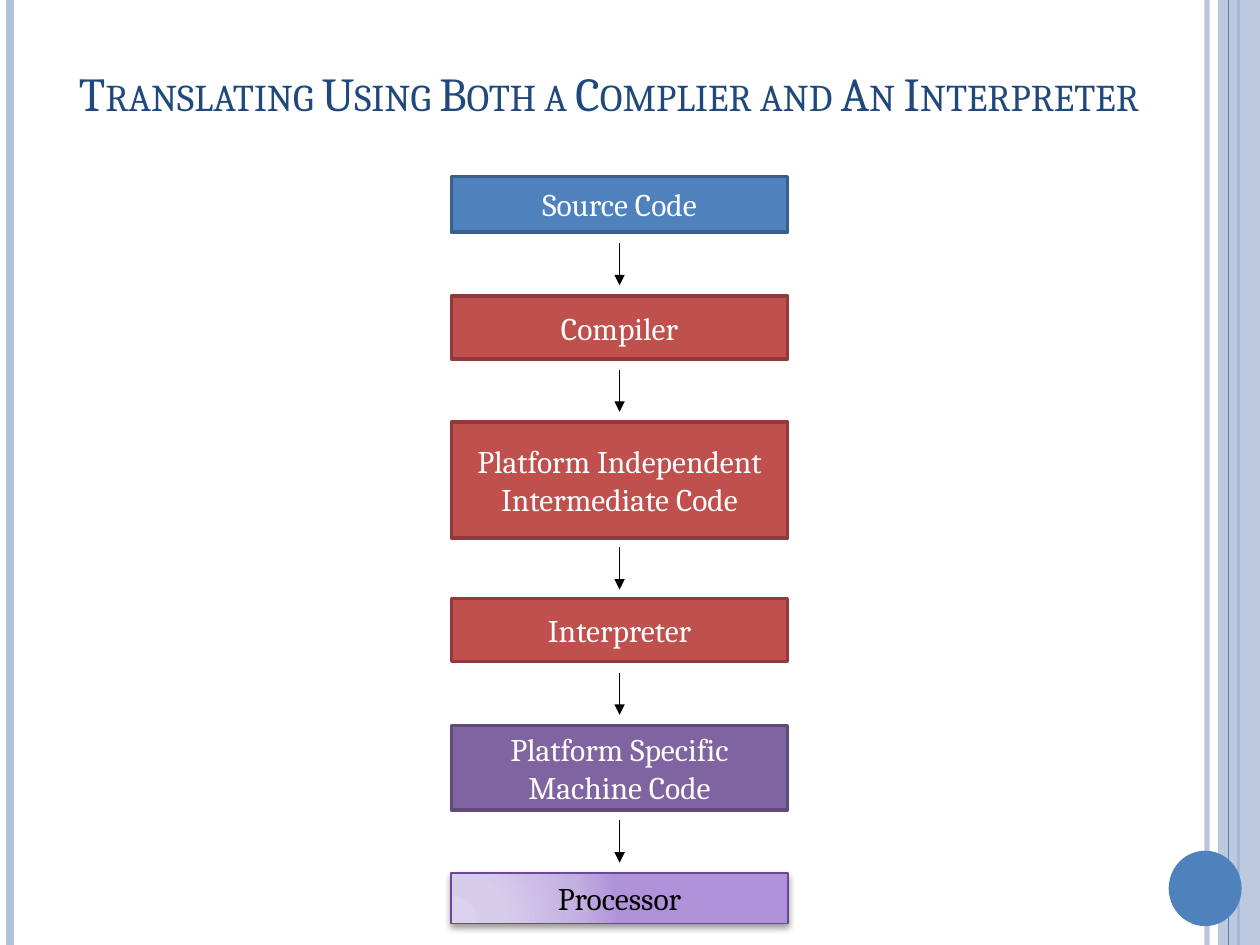
from lxml import etree
from pptx import Presentation
from pptx.dml.color import RGBColor
from pptx.enum.shapes import MSO_CONNECTOR, MSO_SHAPE
from pptx.enum.text import MSO_ANCHOR, MSO_AUTO_SIZE, PP_ALIGN
from pptx.oxml import parse_xml
from pptx.oxml.ns import nsdecls, qn
from pptx.util import Cm, Pt

RECT, OVAL = MSO_SHAPE.RECTANGLE, MSO_SHAPE.OVAL
STRAIGHT = MSO_CONNECTOR.STRAIGHT
MIDDLE, TOP = MSO_ANCHOR.MIDDLE, MSO_ANCHOR.TOP
CENTER = PP_ALIGN.CENTER
GROW = MSO_AUTO_SIZE.SHAPE_TO_FIT_TEXT

FONT = "Cambria"
WHITE = RGBColor(0xFF, 0xFF, 0xFF)
BLACK = RGBColor(0x00, 0x00, 0x00)
NAVY = RGBColor(0x1F, 0x49, 0x7D)
BLUE = RGBColor(0x4F, 0x81, 0xBD)
BLUE_EDGE = RGBColor(0x3A, 0x5F, 0x8C)
RED = RGBColor(0xC0, 0x50, 0x4D)
RED_EDGE = RGBColor(0x8E, 0x3B, 0x39)
PURPLE = RGBColor(0x80, 0x64, 0xA2)
PURPLE_EDGE = RGBColor(0x5F, 0x4A, 0x78)
VIOLET_EDGE = RGBColor(0x6C, 0x48, 0x98)
PALE_BLUE = RGBColor(0xB3, 0xC1, 0xDB)
LILAC_STOPS = [
    (0, RGBColor(0xDB, 0xD0, 0xED)),
    (30, RGBColor(0xD8, 0xCC, 0xEB)),
    (75, RGBColor(0xC3, 0xB0, 0xE2)),
    (100, RGBColor(0xAF, 0x92, 0xDA)),
]

SLIDE_W, SLIDE_H = 25.4, 19.05
BOX_LEFT, BOX_W = 9.1, 6.78
ARROW_LEN = 0.85

# text, top, height, fill, edge
STEPS = [
    ("Source Code", 3.56, 1.12, BLUE, BLUE_EDGE),
    ("Compiler", 5.97, 1.27, RED, RED_EDGE),
    ("Platform Independent Intermediate Code", 8.51, 2.34, RED, RED_EDGE),
    ("Interpreter", 12.07, 1.27, RED, RED_EDGE),
    ("Platform Specific Machine Code", 14.63, 1.7, PURPLE, PURPLE_EDGE),
    ("Processor", 17.6, 1.02, None, VIOLET_EDGE),
]


def set_alpha(fill_holder, percent):
    """Make the solid colour found inside an element partly transparent."""
    color = fill_holder.find(".//" + qn("a:srgbClr"))
    etree.SubElement(color, qn("a:alpha"), val=str(percent * 1000))


def write_text(sp, text, size=18, color=WHITE, anchor=MIDDLE, small_caps=False):
    tf = sp.text_frame
    tf.word_wrap = True
    tf.vertical_anchor = anchor
    p = tf.paragraphs[0]
    p.alignment = CENTER
    r = p.add_run()
    r.text = text
    r.font.name = FONT
    r.font.size = Pt(size)
    r.font.color.rgb = color
    if small_caps:
        r.font._element.set("cap", "small")


def add_block(s, kind, left, top, width, height, fill=None, edge=None, edge_pt=2):
    sp = s.shapes.add_shape(kind, Cm(left), Cm(top), Cm(width), Cm(height))
    sp.shadow.inherit = False
    if fill is not None:
        sp.fill.solid()
        sp.fill.fore_color.rgb = fill
    if edge is None:
        sp.line.fill.background()
    else:
        sp.line.color.rgb = edge
        sp.line.width = Pt(edge_pt)
    return sp


def add_line(s, x, top, bottom, color, width, arrow=False):
    """Add a vertical line, pointing down if arrow is set."""
    line = s.shapes.add_connector(STRAIGHT, Cm(x), Cm(top), Cm(x), Cm(bottom))
    line.line.color.rgb = color
    line.line.width = Pt(width)
    sp_pr = line._element.spPr
    if arrow:
        etree.SubElement(sp_pr.find(qn("a:ln")), qn("a:tailEnd"), type="triangle")
    etree.SubElement(sp_pr, qn("a:effectLst"))
    return line


def add_lilac_glow(sp):
    """Give a shape the radial lilac gradient and a soft shadow below."""
    sp.fill.gradient()
    sp_pr = sp._element.spPr
    stops = "".join(
        f'<a:gs pos="{pos * 1000}"><a:srgbClr val="{color}"/></a:gs>'
        for pos, color in LILAC_STOPS
    )
    gradient = parse_xml(
        f'<a:gradFill {nsdecls("a")} rotWithShape="1"><a:gsLst>{stops}</a:gsLst>'
        '<a:path path="circle">'
        '<a:fillToRect l="5000" t="100000" r="120000" b="10000"/>'
        "</a:path></a:gradFill>"
    )
    sp_pr.replace(sp_pr.find(qn("a:gradFill")), gradient)
    shadow = parse_xml(
        f'<a:outerShdw {nsdecls("a")} blurRad="{Pt(4)}" dist="{Pt(2)}" '
        'dir="5400000" rotWithShape="0"><a:srgbClr val="000000">'
        '<a:alpha val="40000"/></a:srgbClr></a:outerShdw>'
    )
    sp_pr.find(qn("a:effectLst")).append(shadow)


def add_side_bands(s):
    faint = add_line(s, 24.33, 0, SLIDE_H, PALE_BLUE, 3)
    set_alpha(faint._element.spPr, 93)
    add_line(s, 0.21, 0, SLIDE_H, PALE_BLUE, 4.5)
    add_line(s, 24.97, 0, SLIDE_H, BLUE, 1.5)
    band = add_block(s, RECT, 24.55, 0, 0.85, SLIDE_H, PALE_BLUE)
    set_alpha(band._element.spPr, 87)
    add_line(s, 24.77, 0, SLIDE_H, BLUE, 0.75)
    add_block(s, OVAL, 23.56, 17.15, 1.47, 1.52, BLUE)


def add_title(s, text):
    sp = s.shapes.add_textbox(Cm(1.27), Cm(0.76), Cm(22.02), Cm(2.21))
    sp.text_frame.margin_left = sp.text_frame.margin_right = 0
    write_text(sp, text, size=27, color=NAVY, small_caps=True)


def add_step(s, text, top, height, fill, edge):
    if fill is not None:
        sp = add_block(s, RECT, BOX_LEFT, top, BOX_W, height, fill, edge)
        write_text(sp, text)
        return
    sp = add_block(s, RECT, BOX_LEFT, top, BOX_W, height, edge=edge, edge_pt=1)
    add_lilac_glow(sp)
    write_text(sp, text, color=BLACK, anchor=TOP)
    sp.text_frame.auto_size = GROW


def add_flow(s):
    for step in STEPS:
        add_step(s, *step)
    for (_, top, height, *_), (_, next_top, *_) in zip(STEPS, STEPS[1:]):
        start = (top + height + next_top - ARROW_LEN) / 2
        add_line(s, BOX_LEFT + BOX_W / 2, start, start + ARROW_LEN,
                 BLACK, 0.75, arrow=True)


def main():
    prs = Presentation()
    prs.slide_width, prs.slide_height = Cm(SLIDE_W), Cm(SLIDE_H)
    s = prs.slides.add_slide(prs.slide_layouts[6])
    add_side_bands(s)
    add_flow(s)
    add_title(s, "Translating Using Both a Complier and An Interpreter")
    prs.save("out.pptx")


if __name__ == "__main__":
    main()
